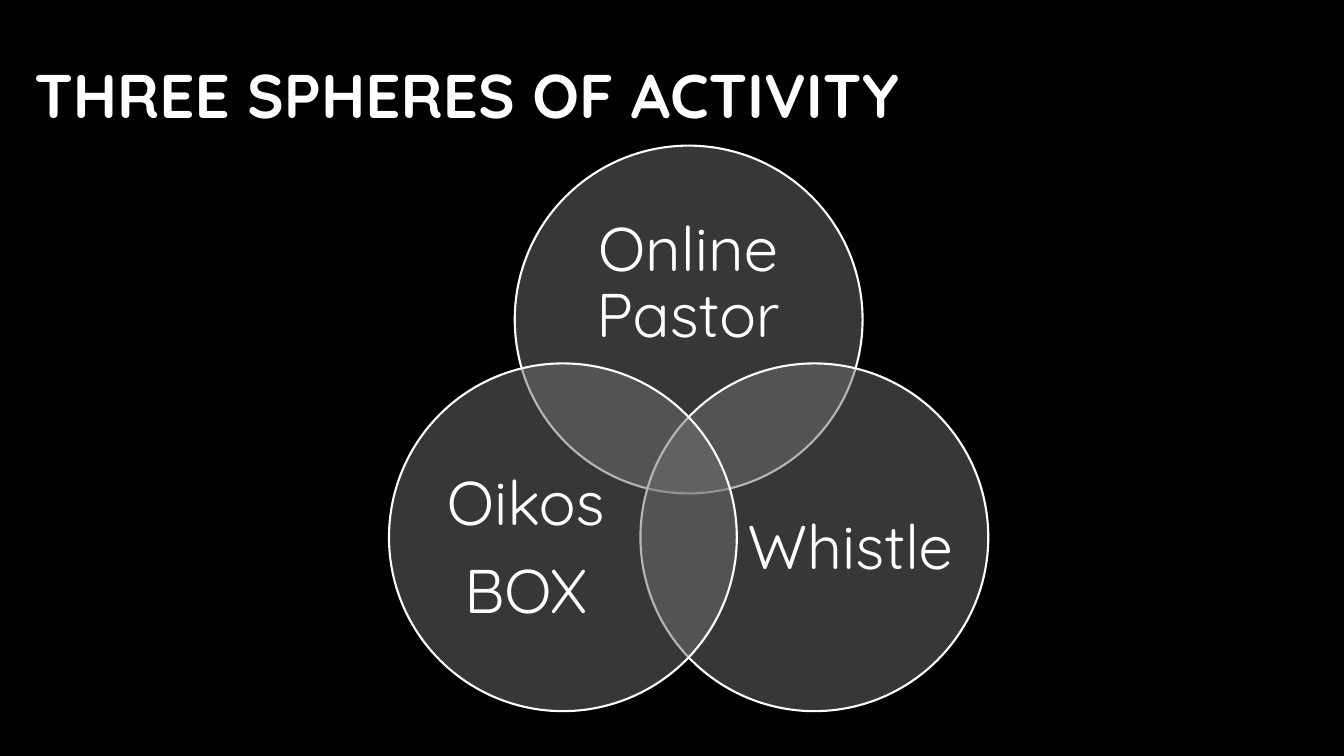
from math import cos, radians, sin

from lxml.etree import SubElement
from pptx import Presentation
from pptx.dml.color import RGBColor
from pptx.enum.shapes import MSO_SHAPE
from pptx.enum.text import MSO_ANCHOR, PP_ALIGN
from pptx.oxml.ns import qn
from pptx.util import Inches, Pt

TITLE = "THREE SPHERES OF ACTIVITY"
SPHERES = [
    (-90, ["Online Pastor"], (5.56, 2.05, 2.53, 1.55)),
    (30, ["Whistle"], (7.4, 4.5, 2.07, 1.9)),
    (150, ["Oikos", "BOX"], (4.18, 4.5, 2.07, 1.9)),
]
MID_X, MID_Y, ORBIT, SIZE = 6.83, 4.61, 1.44, 3.45
FONT = "Quicksand"
BLACK = RGBColor(0x00, 0x00, 0x00)
WHITE = RGBColor(0xFF, 0xFF, 0xFF)
GREY = RGBColor(0x6F, 0x6F, 0x6F)


def style(para, align, bold=False):
    """Give a paragraph the slide's font, colour and alignment."""
    para.alignment = align
    para.font.name = FONT
    para.font.size = Pt(44)
    para.font.bold = bold
    para.font.color.rgb = WHITE


def add_title(slide):
    """Place the heading in the title placeholder."""
    title = slide.shapes.title
    title.left, title.top = Inches(0.24), Inches(-0.11)
    title.width, title.height = Inches(10.83), Inches(2.08)
    title.text_frame.text = TITLE
    title.text_frame.vertical_anchor = MSO_ANCHOR.MIDDLE
    style(title.text_frame.paragraphs[0], PP_ALIGN.LEFT, True)


def add_sphere(slide, angle):
    """Draw one half-transparent circle around the common centre."""
    left = MID_X + ORBIT * cos(radians(angle)) - SIZE / 2
    top = MID_Y + ORBIT * sin(radians(angle)) - SIZE / 2
    disc = slide.shapes.add_shape(
        MSO_SHAPE.OVAL, Inches(left), Inches(top), Inches(SIZE), Inches(SIZE))
    disc.shadow.inherit = False
    disc.fill.solid()
    disc.fill.fore_color.rgb = GREY
    color = disc.fill._xPr.find(qn("a:solidFill"))[0]
    SubElement(color, qn("a:alpha")).set("val", "50000")
    disc.line.color.rgb = WHITE
    disc.line.width = Pt(1.5)


def add_label(slide, lines, box):
    """Write a sphere's name in its own text box."""
    frame = slide.shapes.add_textbox(*map(Inches, box)).text_frame
    frame.word_wrap = True
    frame.vertical_anchor = MSO_ANCHOR.MIDDLE
    frame.margin_left = frame.margin_right = 0
    frame.margin_top = frame.margin_bottom = 0
    frame.text = "\n".join(lines)
    for para in frame.paragraphs:
        style(para, PP_ALIGN.CENTER)
        para.line_spacing = 0.9
        para.space_after = Pt(15.4)


def main():
    """Build the slide and save it."""
    deck = Presentation()
    deck.slide_width, deck.slide_height = Inches(13.33), Inches(7.5)
    slide = deck.slides.add_slide(deck.slide_layouts[5])
    slide.background.fill.solid()
    slide.background.fill.fore_color.rgb = BLACK
    add_title(slide)
    for angle, lines, box in SPHERES:
        add_sphere(slide, angle)
        add_label(slide, lines, box)
    deck.save("out.pptx")


if __name__ == "__main__":
    main()
